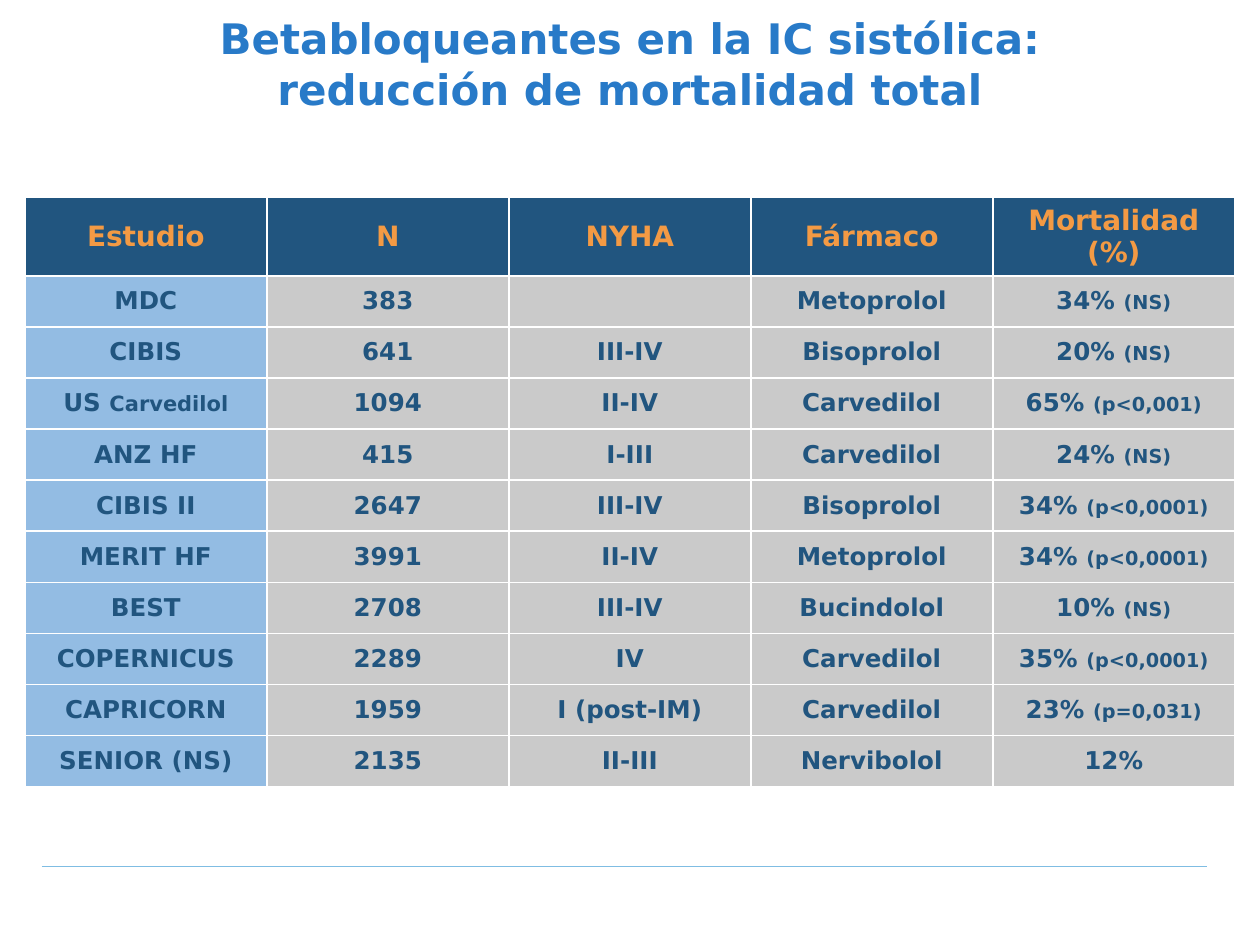
import lxml.etree
import pptx
import pptx.dml.color
import pptx.enum.shapes
import pptx.enum.text
import pptx.oxml.ns
import pptx.util

Pt = pptx.util.Pt
FONT = "DejaVu Sans"
BLUE, NAVY, ORANGE = "287AC8", "21557F", "F39A44"
GREY, WHITE, SKY = "CACACA", "FFFFFF", "7FBDE3"

HEADINGS = ["Estudio", "N", "NYHA", "Fármaco", "Mortalidad\n(%)"]
# Study, study detail, N, NYHA class, drug, mortality reduction, significance
TRIALS = [
    ("MDC", "", "383", "", "Metoprolol", "34%", "(NS)"),
    ("CIBIS", "", "641", "III-IV", "Bisoprolol", "20%", "(NS)"),
    ("US", "Carvedilol", "1094", "II-IV", "Carvedilol", "65%", "(p<0,001)"),
    ("ANZ HF", "", "415", "I-III", "Carvedilol", "24%", "(NS)"),
    ("CIBIS II", "", "2647", "III-IV", "Bisoprolol", "34%", "(p<0,0001)"),
    ("MERIT HF", "", "3991", "II-IV", "Metoprolol", "34%", "(p<0,0001)"),
    ("BEST", "", "2708", "III-IV", "Bucindolol", "10%", "(NS)"),
    ("COPERNICUS", "", "2289", "IV", "Carvedilol", "35%", "(p<0,0001)"),
    ("CAPRICORN", "", "1959", "I (post-IM)", "Carvedilol", "23%", "(p=0,031)"),
    ("SENIOR (NS)", "", "2135", "II-III", "Nervibolol", "12%", ""),
]


def rgb(hex_color):
    return pptx.dml.color.RGBColor.from_string(hex_color)


def add_run(paragraph, text, size, color):
    paragraph.alignment = pptx.enum.text.PP_ALIGN.CENTER
    run = paragraph.add_run()
    run.text = text
    run.font.name = FONT
    run.font.size = Pt(size)
    run.font.bold = True
    run.font.color.rgb = rgb(color)


def sub(parent, tag, **attributes):
    return lxml.etree.SubElement(parent, pptx.oxml.ns.qn(tag), **attributes)


def add_title(slide, lines):
    title = slide.shapes.title
    title.left, title.top, title.width, title.height = Pt(0), Pt(11.5), Pt(720), Pt(49)
    frame = title.text_frame
    frame.auto_size = pptx.enum.text.MSO_AUTO_SIZE.NONE
    frame.vertical_anchor = pptx.enum.text.MSO_ANCHOR.MIDDLE
    heading = frame.paragraphs[0]
    for index, line in enumerate(lines):
        if index:
            heading.add_line_break()
        add_run(heading, line, 24, BLUE)


def add_rule(slide, left, right, y):
    rule = slide.shapes.add_connector(
        pptx.enum.shapes.MSO_CONNECTOR.STRAIGHT, Pt(left), Pt(y), Pt(right), Pt(y))
    rule.line.color.rgb = rgb(SKY)
    rule.line.width = Pt(0.75)
    sub(rule._element.spPr, "a:effectLst")


def style_cell(cell, fill, opacity=100):
    cell.vertical_anchor = pptx.enum.text.MSO_ANCHOR.MIDDLE
    properties = cell._tc.get_or_add_tcPr()
    # Borders come before the fill in the cell properties
    for side in ("a:lnL", "a:lnR", "a:lnT", "a:lnB"):
        border = sub(properties, side, w=str(Pt(1)))
        sub(sub(border, "a:solidFill"), "a:srgbClr", val=WHITE)
    cell.fill.solid()
    cell.fill.fore_color.rgb = rgb(fill)
    if opacity < 100:
        color = properties.find(".//" + pptx.oxml.ns.qn("a:srgbClr") + f"[@val='{fill}']")
        sub(color, "a:alpha", val=str(opacity * 1000))


def fill_heading(cell, heading):
    style_cell(cell, NAVY)
    frame = cell.text_frame
    for index, line in enumerate(heading.split("\n")):
        paragraph = frame.add_paragraph() if index else frame.paragraphs[0]
        add_run(paragraph, line, 16, ORANGE)


def fill_value(cell, value, detail="", detail_size=11):
    paragraph = cell.text_frame.paragraphs[0]
    if value:
        add_run(paragraph, value + (" " if detail else ""), 14, NAVY)
    if detail:
        add_run(paragraph, detail, detail_size, NAVY)


def add_trials_table(slide):
    column_width, heading_height, row_height = 138.3, 44.6, 29.2
    table = slide.shapes.add_table(
        len(TRIALS) + 1, len(HEADINGS), Pt(14.2), Pt(113),
        Pt(column_width * len(HEADINGS)),
        Pt(heading_height + row_height * len(TRIALS))).table
    for column in table.columns:
        column.width = Pt(column_width)
    for index, row in enumerate(table.rows):
        row.height = Pt(row_height if index else heading_height)

    for column, heading in enumerate(HEADINGS):
        fill_heading(table.cell(0, column), heading)

    for row, trial in enumerate(TRIALS, start=1):
        study, study_detail, patients, nyha, drug, mortality, significance = trial
        cells = [table.cell(row, column) for column in range(len(HEADINGS))]
        style_cell(cells[0], BLUE, opacity=50)
        for cell in cells[1:]:
            style_cell(cell, GREY)
        fill_value(cells[0], study, study_detail, detail_size=12)
        for cell, value in zip(cells[1:4], (patients, nyha, drug)):
            fill_value(cell, value)
        fill_value(cells[4], mortality, significance)


def main():
    presentation = pptx.Presentation()
    presentation.slide_width, presentation.slide_height = Pt(720), Pt(540)
    slide = presentation.slides.add_slide(presentation.slide_layouts[5])

    # Footer rule, title and table of trials
    add_rule(slide, 24, 690, 495)
    add_title(slide, ["Betabloqueantes en la IC sistólica:",
                      "reducción de mortalidad total"])
    add_trials_table(slide)
    presentation.save("out.pptx")


if __name__ == "__main__":
    main()
